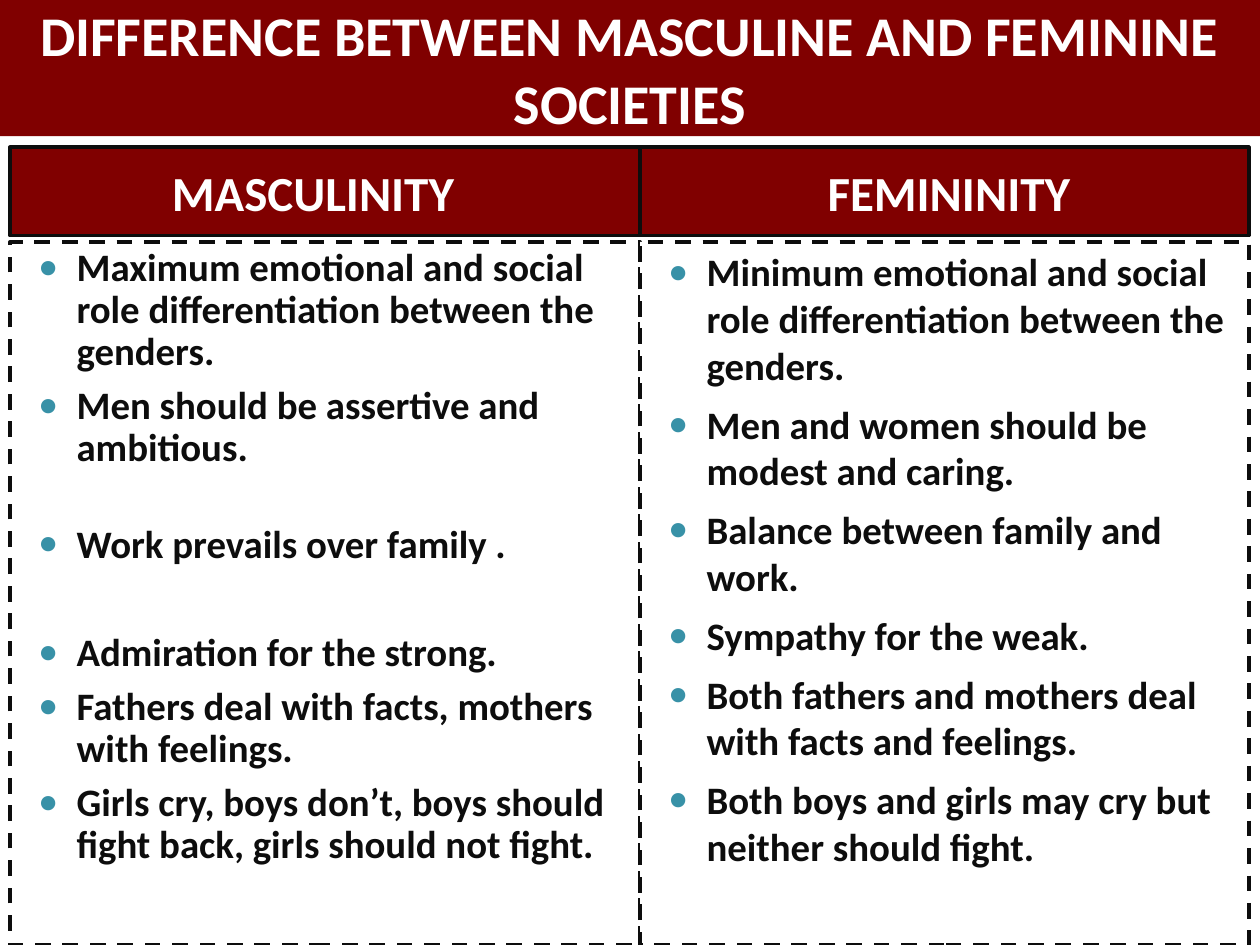
from lxml import etree
from pptx import Presentation
from pptx import util as u
from pptx.dml.color import RGBColor
from pptx.enum import dml, shapes, text
from pptx.oxml.ns import qn

FONT = "Calibri"
MAROON, INK, WHITE, TEAL = "800000", "0D0D0D", "FFFFFF", "3891A7"
COLUMNS = [(0.08, 5), (5.08, 4.83)]
HEADER_ROW = (1.17, 0.7)
BODY_ROW = (1.92, 5.58)
HEADERS = ["MASCULINITY\t", "FEMININITY"]
GAP = 7
MASCULINE = [
    ("Maximum emotional and social role differentiation between the genders.", GAP),
    ("Men should be assertive and ambitious.", GAP),
    ("Work prevails over family .", 31),
    ("Admiration for the strong.", 38),
    ("Fathers deal with facts, mothers with feelings.", GAP),
    ("Girls cry, boys don’t, boys should fight back, girls should not fight.", GAP),
]
FEMININE = [(line, GAP) for line in (
    "Minimum emotional and social role differentiation between the genders.",
    "Men and women should be modest and caring.",
    "Balance between family and work.",
    "Sympathy for the weak.",
    "Both fathers and mothers deal with facts and feelings.",
    "Both boys and girls may cry but neither should fight.",
)]


def paint(color_format, value):
    color_format.rgb = RGBColor.from_string(value)


def add_box(s, column, row, fill, line=None, dash=None):
    (x, w), (y, h) = column, row
    sp = s.shapes.add_shape(shapes.MSO_SHAPE.RECTANGLE, *map(u.Inches, (x, y, w, h)))
    sp.shadow.inherit = False
    sp.fill.solid()
    paint(sp.fill.fore_color, fill)
    if line:
        sp.line.width = u.Pt(2.25)
        paint(sp.line.color, line)
        sp.line.dash_style = dash
    else:
        sp.line.fill.background()
    sp.text_frame.word_wrap = True
    return sp


def add_run(p, words, size, color):
    r = p.add_run()
    r.text = words
    r.font.name, r.font.size, r.font.bold = FONT, u.Pt(size), True
    paint(r.font.color, color)


def indent(p, left, first=0):
    pPr = p._p.get_or_add_pPr()
    pPr.set("marL", str(u.Inches(left)))
    pPr.set("indent", str(u.Inches(first)))
    return pPr


def add_bullet(p):
    pPr = indent(p, 0.43, -0.3)
    color = etree.SubElement(pPr, qn("a:buClr"))
    etree.SubElement(color, qn("a:srgbClr"), val=TEAL)
    etree.SubElement(pPr, qn("a:buSzPct"), val="80000")
    etree.SubElement(pPr, qn("a:buFont"), typeface=FONT)
    etree.SubElement(pPr, qn("a:buChar"), char="●")


def add_heading(s, column, row, words, size, line=None, left=0):
    tf = add_box(s, column, row, MAROON, line).text_frame
    tf.vertical_anchor = text.MSO_ANCHOR.MIDDLE
    p = tf.paragraphs[0]
    p.alignment = text.PP_ALIGN.CENTER
    indent(p, left)
    add_run(p, words, size, WHITE)


def add_list(s, column, items, spacing):
    tf = add_box(s, column, BODY_ROW, WHITE, INK, dml.MSO_LINE.DASH).text_frame
    tf.vertical_anchor = text.MSO_ANCHOR.TOP
    for i, (words, before) in enumerate(items):
        p = tf.add_paragraph() if i else tf.paragraphs[0]
        p.alignment = text.PP_ALIGN.LEFT
        p.line_spacing = spacing
        p.space_before = u.Pt(before)
        add_bullet(p)
        add_run(p, words, 22.2, INK)


def main():
    prs = Presentation()
    prs.slide_width, prs.slide_height = u.Inches(10), u.Inches(7.5)
    s = prs.slides.add_slide(prs.slide_layouts[6])
    add_heading(s, (0, 10), (0, 1.08),
                "DIFFERENCE BETWEEN MASCULINE AND FEMININE SOCIETIES", 32)
    for column, words in zip(COLUMNS, HEADERS):
        add_heading(s, column, HEADER_ROW, words, 28, INK, 0.07)
    for column, items, spacing in zip(COLUMNS, (MASCULINE, FEMININE), (0.9, 1.0)):
        add_list(s, column, items, spacing)
    prs.save("out.pptx")


if __name__ == "__main__":
    main()
